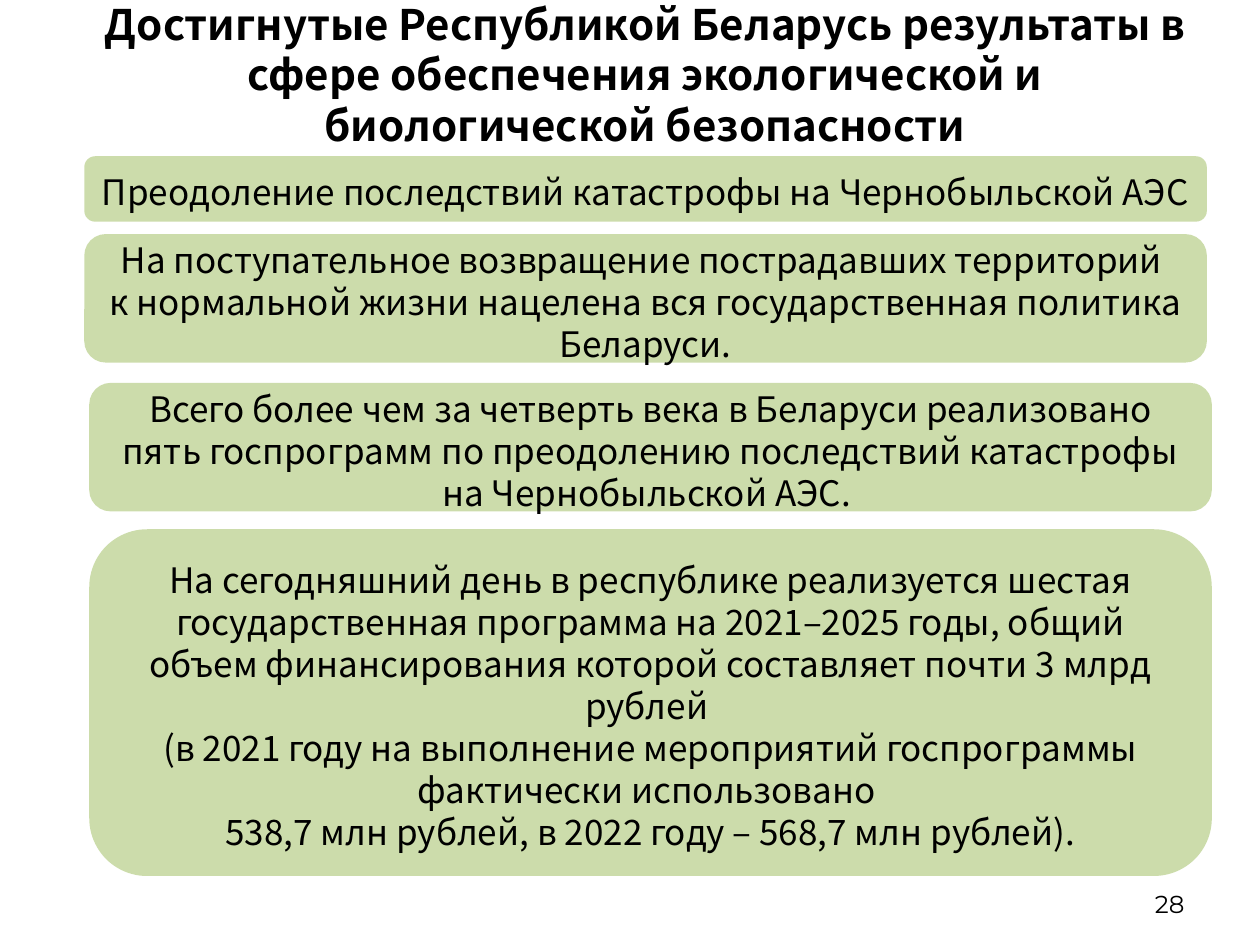
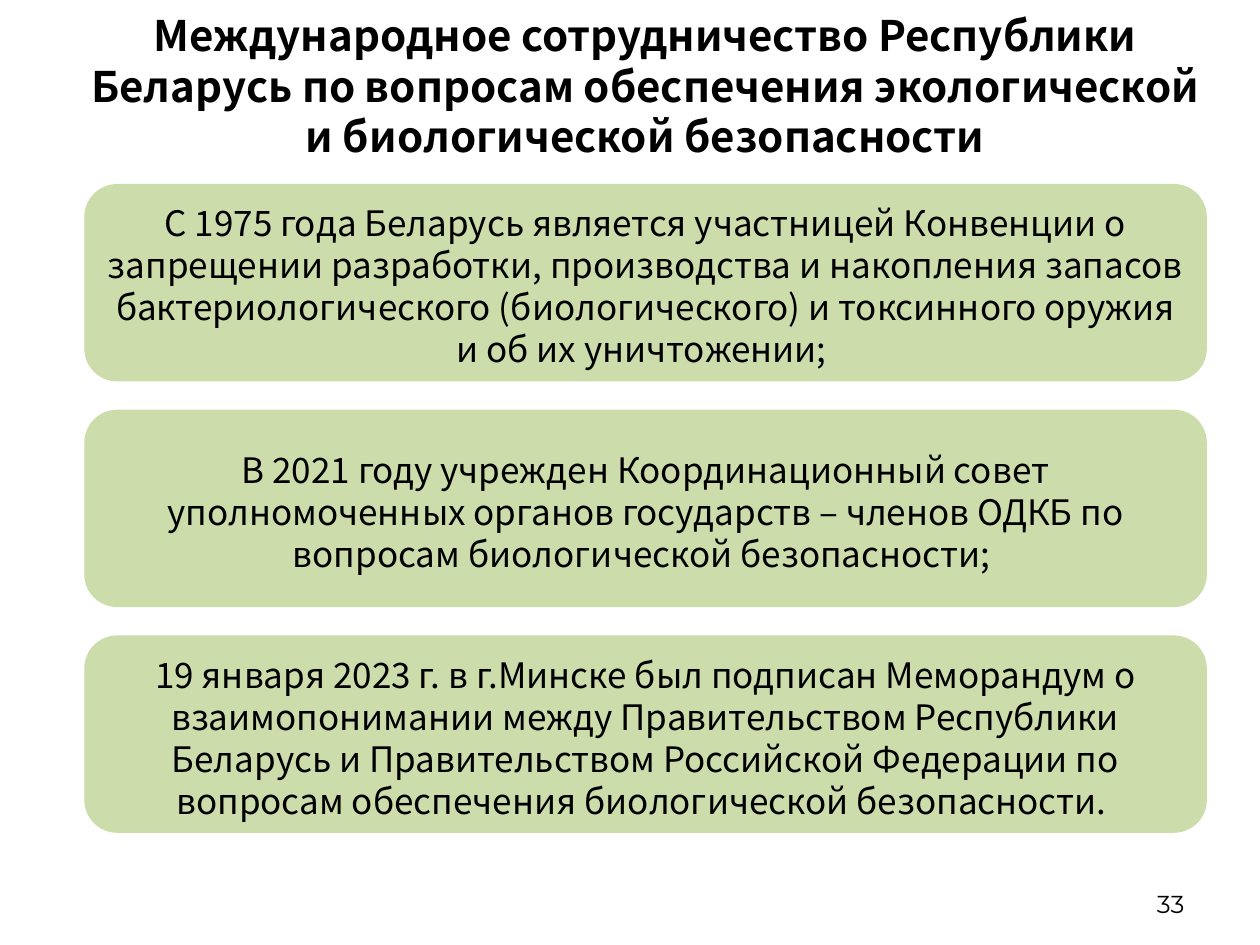
import lxml.etree
import pptx
import pptx.dml.color
import pptx.enum.shapes
import pptx.enum.text
import pptx.oxml.ns
from pptx.util import Cm, Pt

FONT = "Noto Sans CJK JP"
GREEN = "9BBB59"
BLACK = "000000"
LEFT, WIDE = 1.7, 22.63
ALIGN = pptx.enum.text.PP_ALIGN
qn = pptx.oxml.ns.qn


def color(code):
    return pptx.dml.color.RGBColor.from_string(code)


def write(shape, text, size, font=FONT, bold=False, align=ALIGN.CENTER):
    """Put text in a shape, centred vertically, with tight lines."""
    frame = shape.text_frame
    frame.text = text
    frame.word_wrap = True
    frame.auto_size = pptx.enum.text.MSO_AUTO_SIZE.NONE
    frame.vertical_anchor = pptx.enum.text.MSO_ANCHOR.MIDDLE
    frame.margin_left = frame.margin_right = Cm(0.25)
    frame.margin_top, frame.margin_bottom = Cm(0.12), 0
    for para in frame.paragraphs:
        para.alignment = align
        para.line_spacing = Pt(size * 1.2)
        para.space_before = Pt(0)
        for run in para.runs:
            run.font.name = font
            run.font.size = Pt(size)
            run.font.bold = bold
            run.font.color.rgb = color(BLACK)


# Each slide: title, title top, page number, boxes (left, top, height, text)
pages = [
    ("Достигнутые Республикой Беларусь результаты в сфере обеспечения "
     "экологической и биологической безопасности", -0.03, "28", [
         (LEFT, 3.15, 1.32,
          "Преодоление последствий катастрофы на Чернобыльской АЭС"),
         (LEFT, 4.72, 2.59,
          "На поступательное возвращение пострадавших территорий \v"
          "к нормальной жизни нацелена вся государственная политика "
          "Беларуси."),
         (LEFT + 0.1, 7.72, 2.59,
          "Всего более чем за четверть века в Беларуси реализовано пять "
          "госпрограмм по преодолению последствий катастрофы на "
          "Чернобыльской АЭС. "),
         (LEFT + 0.1, 10.67, 6.99,
          "На сегодняшний день в республике реализуется шестая "
          "государственная программа на 2021–2025 годы, общий объем "
          "финансирования которой составляет почти 3 млрд рублей \v"
          "(в 2021 году на выполнение мероприятий госпрограммы фактически "
          "использовано \n"
          "538,7 млн рублей, в 2022 году – 568,7 млн рублей)."),
     ]),
    ("Международное сотрудничество Республики Беларусь по вопросам "
     "обеспечения экологической и биологической безопасности", 0.2, "33", [
         (LEFT, 3.71 + 4.55 * row, 3.98, text) for row, text in enumerate([
             "С 1975 года Беларусь является участницей Конвенции о "
             "запрещении разработки, производства и накопления запасов "
             "бактериологического (биологического) и токсинного оружия и "
             "об их уничтожении; ",
             "В 2021 году учрежден Координационный совет уполномоченных "
             "органов государств – членов ОДКБ по вопросам биологической "
             "безопасности; ",
             "19 января 2023 г. в г.Минске был подписан Меморандум о "
             "взаимопонимании между Правительством Республики Беларусь и "
             "Правительством Российской Федерации по вопросам обеспечения "
             "биологической безопасности. ",
         ])
     ]),
]

deck = pptx.Presentation()
deck.slide_width, deck.slide_height = Cm(25.4), Cm(19.05)

for title, top, number, boxes in pages:
    slide = deck.slides.add_slide(deck.slide_layouts[5])

    head = slide.shapes.title
    head.left, head.top = Cm(1.57), Cm(top)
    head.width, head.height = Cm(22.86), Cm(2.92)
    write(head, title, 24, bold=True)

    page = slide.shapes.add_textbox(Cm(18.2), Cm(17.65), Cm(5.93), Cm(1.02))
    write(page, number, 14, font="Montserrat", align=ALIGN.RIGHT)

    for left, y, high, text in boxes:
        box = slide.shapes.add_shape(
            pptx.enum.shapes.MSO_SHAPE.ROUNDED_RECTANGLE,
            Cm(left), Cm(y), Cm(WIDE), Cm(high))
        box.shadow.inherit = False
        box.line.fill.background()
        box.fill.solid()
        box.fill.fore_color.rgb = color(GREEN)
        tint = next(box.element.spPr.iter(qn("a:srgbClr")))
        lxml.etree.SubElement(tint, qn("a:alpha")).set("val", "50000")
        write(box, text, 20)

deck.save("out.pptx")
